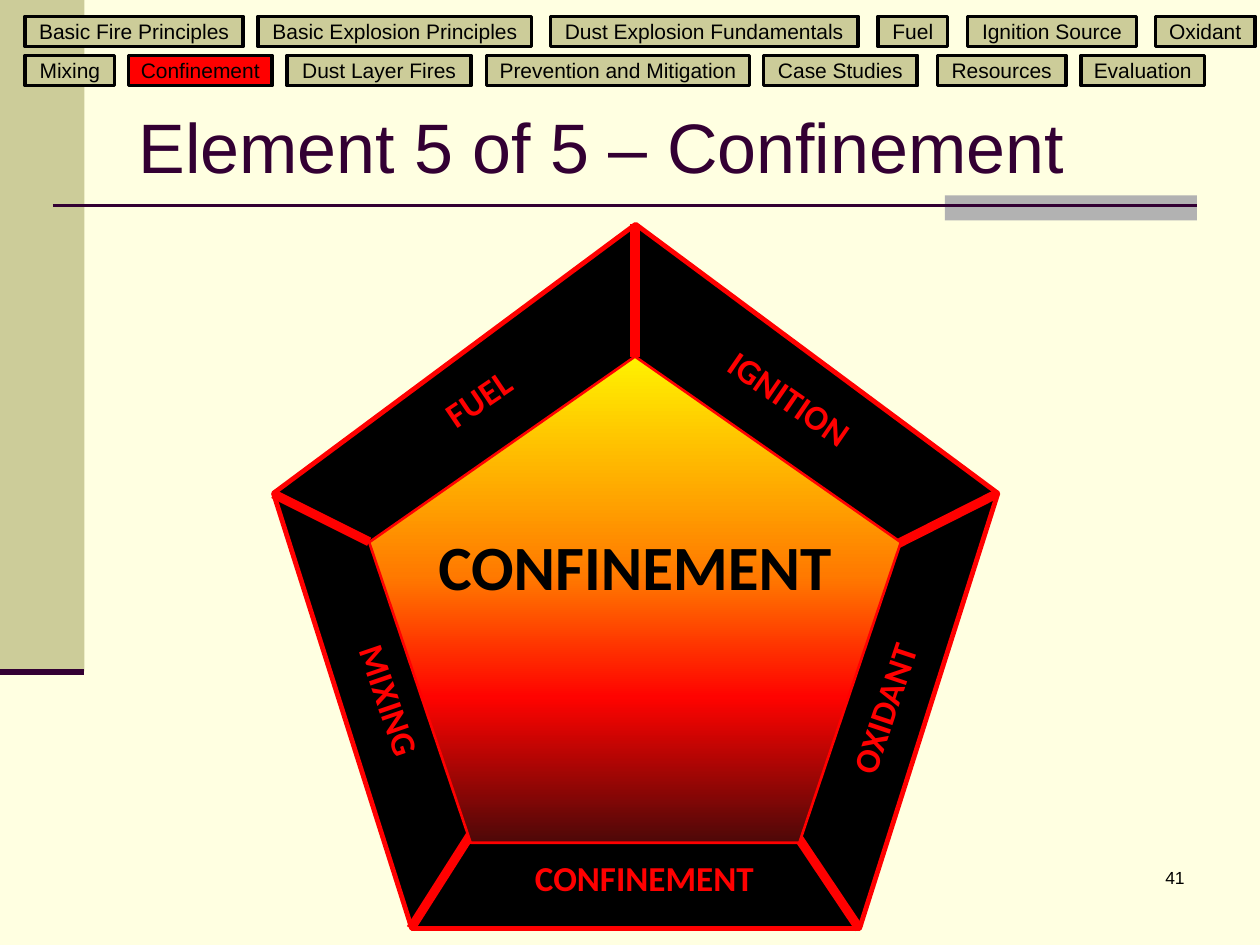
from typing import NamedTuple

from lxml import etree
from pptx import Presentation
from pptx.dml.color import RGBColor
from pptx.enum.shapes import MSO_CONNECTOR, MSO_SHAPE
from pptx.enum.text import MSO_ANCHOR, PP_ALIGN
from pptx.oxml.ns import qn
from pptx.util import Inches, Pt

RECTANGLE = MSO_SHAPE.RECTANGLE
PENTAGON = MSO_SHAPE.REGULAR_PENTAGON
STRAIGHT = MSO_CONNECTOR.STRAIGHT
LEFT, CENTER, RIGHT = PP_ALIGN.LEFT, PP_ALIGN.CENTER, PP_ALIGN.RIGHT
TOP, MIDDLE = MSO_ANCHOR.TOP, MSO_ANCHOR.MIDDLE

CREAM, KHAKI, GRAY = "FFFFE1", "CCCC99", "B2B2B2"
PLUM, BLACK, RED = "330033", "000000", "FF0000"


class Box(NamedTuple):
    left: float
    top: float
    width: float
    height: float


class Button(NamedTuple):
    text: str
    left: float
    width: float
    fill: str = KHAKI


class Line(NamedTuple):
    start: tuple[float, float]
    end: tuple[float, float]
    color: str = RED
    width: float = 5.25


class Label(NamedTuple):
    text: str
    box: Box
    rotation: float = 0
    size: float = 20
    color: str = RED


class Stop(NamedTuple):
    position: int
    color: str


BUTTON_HEIGHT = 0.24
BUTTON_ROWS = {
    0.13: [
        Button("Basic Fire Principles", 0.2, 1.73),
        Button("Basic Explosion Principles", 2.05, 2.17),
        Button("Dust Explosion Fundamentals", 4.37, 2.44),
        Button("Fuel", 6.97, 0.55),
        Button("Ignition Source", 7.68, 1.34),
        Button("Oxidant", 9.17, 0.79),
    ],
    0.44: [
        Button("Mixing", 0.2, 0.71),
        Button("Confinement", 1.02, 1.14, RED),
        Button("Dust Layer Fires", 2.28, 1.46),
        Button("Prevention and Mitigation", 3.86, 2.09),
        Button("Case Studies", 6.06, 1.22),
        Button("Resources", 7.44, 1.02),
        Button("Evaluation", 8.58, 0.98),
    ],
}
RULES = [
    Line((0.42, 1.63), (9.5, 1.63), PLUM, 1.5),
    Line((0, 5.33), (0.67, 5.33), PLUM, 3.5),
]
SPOKES = [
    Line((5.04, 1.78), (5.04, 2.83)),
    Line((3.82, 6.49), (3.26, 7.37)),
    Line((2.17, 3.92), (2.93, 4.3)),
    Line((6.23, 6.49), (6.82, 7.37)),
    Line((7.91, 3.92), (6.82, 4.47)),
]
SIDE_LABELS = [
    Label("CONFINEMENT", Box(3.75, 6.75, 2.73, 0.55)),
    Label("MIXING", Box(1.97, 5.31, 2.16, 0.53), 71.1),
    Label("OXIDANT", Box(5.98, 5.37, 2.16, 0.53), 288.5),
    Label("IGNITION", Box(5.18, 2.93, 2.11, 0.55), 34.5),
    Label("FUEL", Box(2.77, 2.93, 2.11, 0.55), 326),
]
CENTER_LABEL = Label("CONFINEMENT", Box(2.93, 4.14, 4.22, 0.88), 0, 36, BLACK)
FLAME = [Stop(0, "FFF200"), Stop(45, "FF7A00"), Stop(70, "FF0300"), Stop(100, "4D0808")]


def set_color(color_format, color: str) -> None:
    color_format.rgb = RGBColor.from_string(color)


def set_fill(fill, color: str) -> None:
    fill.solid()
    set_color(fill.fore_color, color)


def place(shape, box: Box) -> None:
    shape.left, shape.top, shape.width, shape.height = map(Inches, box)


def write(shape, text: str, size: float, color: str, align=CENTER, anchor=TOP,
          font: str = "Arial", bold: bool = False) -> None:
    frame = shape.text_frame
    frame.vertical_anchor = anchor
    paragraph = frame.paragraphs[0]
    paragraph.alignment = align
    run = paragraph.add_run()
    run.text = text
    run.font.name, run.font.size, run.font.bold = font, Pt(size), bold
    set_color(run.font.color, color)


def add_panel(slide, preset, box: Box, fill: str, line: str = "", line_width: float = 0):
    shape = slide.shapes.add_shape(preset, *map(Inches, box))
    shape.shadow.inherit = False
    set_fill(shape.fill, fill)
    if line:
        set_color(shape.line.color, line)
        shape.line.width = Pt(line_width)
    else:
        shape.line.fill.background()
    return shape


def add_line(slide, line: Line) -> None:
    connector = slide.shapes.add_connector(STRAIGHT, *map(Inches, line.start + line.end))
    set_color(connector.line.color, line.color)
    connector.line.width = Pt(line.width)
    etree.SubElement(connector._element.spPr, qn("a:effectLst"))


def add_button(slide, button: Button, top: float) -> None:
    box = Box(button.left, top, button.width, BUTTON_HEIGHT)
    shape = add_panel(slide, RECTANGLE, box, button.fill, BLACK, 2)
    shape.text_frame.word_wrap = False
    write(shape, button.text, 12, BLACK, anchor=MIDDLE)


def add_label(slide, label: Label) -> None:
    text_box = slide.shapes.add_textbox(*map(Inches, label.box))
    text_box.text_frame.word_wrap = True
    text_box.rotation = label.rotation
    write(text_box, label.text, label.size, label.color, font="Calibri", bold=True)


def set_downward_gradient(fill, stops: list[Stop]) -> None:
    fill.gradient()
    fill.gradient_angle = 270
    stop_list = fill._fill._gradFill.find(qn("a:gsLst"))
    for old_stop in list(stop_list):
        stop_list.remove(old_stop)
    for stop in stops:
        element = etree.SubElement(stop_list, qn("a:gs"), pos=str(stop.position * 1000))
        etree.SubElement(element, qn("a:srgbClr"), val=stop.color)


def main() -> None:
    presentation = Presentation()
    presentation.slide_width, presentation.slide_height = Inches(10), Inches(7.5)
    slide = presentation.slides.add_slide(presentation.slide_layouts[5])
    set_fill(slide.background.fill, CREAM)

    add_panel(slide, RECTANGLE, Box(0, 0, 0.67, 5.33), KHAKI)
    add_panel(slide, RECTANGLE, Box(7.5, 1.55, 2, 0.2), GRAY)
    for rule in RULES:
        add_line(slide, rule)

    title = slide.shapes.title
    place(title, Box(1, 0.53, 8.5, 1.25))
    write(title, "Element 5 of 5 – Confinement", 40, PLUM, LEFT, MIDDLE)
    page_number = slide.shapes.add_textbox(*map(Inches, Box(7.42, 6.83, 2.08, 0.5)))
    page_number.text_frame.word_wrap = True
    write(page_number, "41", 10, BLACK, RIGHT)

    for top, buttons in BUTTON_ROWS.items():
        for button in buttons:
            add_button(slide, button, top)

    add_panel(slide, PENTAGON, Box(2.17, 1.78, 5.75, 5.59), BLACK, RED, 2.75)
    for spoke in SPOKES:
        add_line(slide, spoke)
    for label in SIDE_LABELS:
        add_label(slide, label)
    core = add_panel(slide, PENTAGON, Box(2.93, 2.83, 4.22, 3.86), BLACK, RED, 1.5)
    set_downward_gradient(core.fill, FLAME)
    add_label(slide, CENTER_LABEL)

    presentation.save("out.pptx")


if __name__ == "__main__":
    main()
